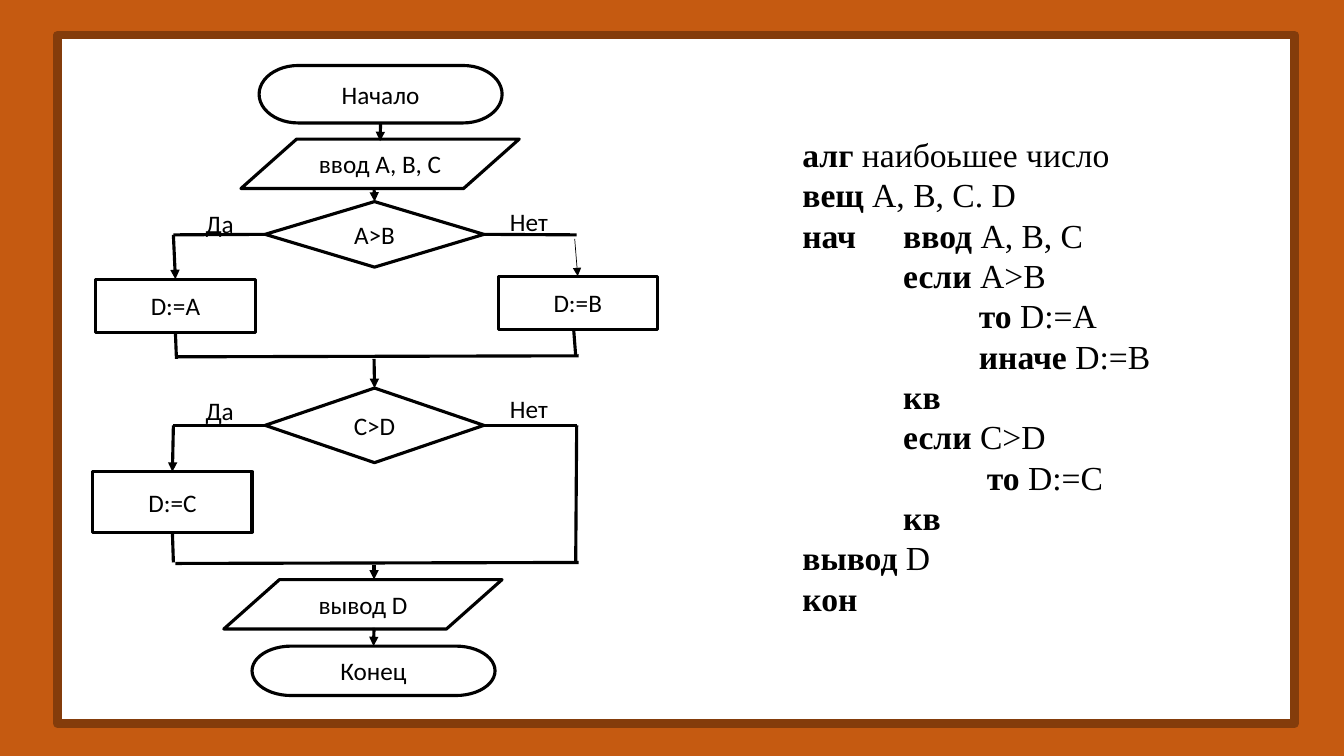
"""Build a slide with a flowchart for the largest of three numbers and its pseudocode."""
from dataclasses import dataclass
from typing import NamedTuple, Union

import lxml.etree
import pptx
import pptx.dml.color
import pptx.enum.shapes
import pptx.enum.text
import pptx.oxml.ns
import pptx.util

Inches = pptx.util.Inches
Kind = pptx.enum.shapes.MSO_SHAPE
ORANGE = pptx.dml.color.RGBColor(0xC5, 0x5A, 0x11)
BROWN = pptx.dml.color.RGBColor(0x84, 0x3C, 0x0B)
WHITE = pptx.dml.color.RGBColor(0xFF, 0xFF, 0xFF)
BLACK = pptx.dml.color.RGBColor(0, 0, 0)
TOP, LEFT, BOTTOM, RIGHT = range(4)
LEFT_RAIL, AXIS, RIGHT_RAIL = 1.72, 3.71, 5.72
BLOCK_SIZES = {
    Kind.FLOWCHART_TERMINATOR: 2.41,
    Kind.FLOWCHART_DATA: 2.76,
    Kind.FLOWCHART_DECISION: 2.17,
    Kind.FLOWCHART_PROCESS: 1.58,
}


class Point(NamedTuple):
    x: float
    y: float


class Dock(NamedTuple):
    block: str
    side: int


@dataclass
class Block:
    text: str
    kind: Kind
    left: float
    top: float
    height: float


@dataclass
class Wire:
    start: Union[Point, Dock]
    end: Union[Point, Dock]
    arrow: bool = False
    weight: float = 2.25


@dataclass
class Branch:
    decision: str
    axis_y: float
    label_top: float
    merge_y: float


@dataclass
class CodeLine:
    indent: float
    keyword: str
    rest: str = ""


BLOCKS = [
    Block("Начало", Kind.FLOWCHART_TERMINATOR, 2.57, 0.65, 0.57),
    Block("ввод А, В, С", Kind.FLOWCHART_DATA, 2.39, 1.38, 0.49),
    Block("А>В", Kind.FLOWCHART_DECISION, 2.63, 2, 0.65),
    Block("D:=А", Kind.FLOWCHART_PROCESS, 0.95, 2.77, 0.53),
    Block("D:=В", Kind.FLOWCHART_PROCESS, 4.94, 2.74, 0.53),
    Block("С>D", Kind.FLOWCHART_DECISION, 2.63, 3.85, 0.74),
    Block("D:=С", Kind.FLOWCHART_PROCESS, 0.92, 4.68, 0.6),
    Block("вывод D", Kind.FLOWCHART_DATA, 2.22, 5.75, 0.49),
    Block("Конец", Kind.FLOWCHART_TERMINATOR, 2.5, 6.41, 0.49),
]
BRANCHES = [Branch("А>В", 2.33, 2, 3.54), Branch("С>D", 4.22, 3.85, 5.59)]
WIRES = [
    Wire(Dock("Начало", BOTTOM), Point(3.77, 1.4), True),
    Wire(Point(AXIS, 1.86), Dock("А>В", TOP), True),
    Wire(Point(LEFT_RAIL, 2.33), Dock("D:=А", TOP), True),
    Wire(Point(5.7, 2.37), Dock("D:=В", TOP), True, 0.5),
    Wire(Dock("D:=А", BOTTOM), Point(1.75, 3.56)),
    Wire(Point(5.69, 3.27), Point(5.71, 3.53)),
    Wire(Point(AXIS, 3.56), Dock("С>D", TOP), True),
    Wire(Point(LEFT_RAIL, 4.22), Dock("D:=С", TOP), True),
    Wire(Dock("D:=С", BOTTOM), Point(LEFT_RAIL, 5.58)),
    Wire(Point(RIGHT_RAIL, 4.22), Point(5.71, 5.58)),
    Wire(Point(AXIS, 5.61), Point(AXIS, 5.75), True),
    Wire(Point(AXIS, 6.23), Dock("Конец", TOP), True),
]
CODE = [
    CodeLine(0, "алг", " наибоьшее число"),
    CodeLine(0, "вещ", " А, В, С. D"),
    CodeLine(0, "нач\tввод", " А, В, С"),
    CodeLine(1, "если", " А>В"),
    CodeLine(1.75, "то", " D:=А"),
    CodeLine(1.75, "иначе", " D:=В"),
    CodeLine(1, "кв"),
    CodeLine(1, "если", " С>D"),
    CodeLine(1.83, "то", " D:=С"),
    CodeLine(1, "кв"),
    CodeLine(0, "вывод", " D"),
    CodeLine(0, "кон"),
]


def style_font(font, name: str, size: float, bold: bool = False) -> None:
    font.name, font.size, font.bold = name, pptx.util.Pt(size), bold
    font.color.rgb = BLACK


def add_panel(page, kind, left: float, top: float, width: float, height: float, color, weight: float):
    panel = page.shapes.add_shape(kind, Inches(left), Inches(top), Inches(width), Inches(height))
    panel.shadow.inherit = False
    panel.fill.solid()
    panel.fill.fore_color.rgb = WHITE
    panel.line.color.rgb = color
    panel.line.width = pptx.util.Pt(weight)
    return panel


def add_block(page, block: Block):
    box = add_panel(page, block.kind, block.left, block.top, BLOCK_SIZES[block.kind], block.height, BLACK, 2.25)
    frame = box.text_frame
    frame.margin_top = frame.margin_bottom = 0
    frame.vertical_anchor = pptx.enum.text.MSO_ANCHOR.MIDDLE
    frame.text = block.text
    frame.paragraphs[0].alignment = pptx.enum.text.PP_ALIGN.CENTER
    style_font(frame.paragraphs[0].runs[0].font, "Calibri", 18)
    return box


def add_wire(page, wire: Wire, boxes: dict) -> None:
    ends = [end if isinstance(end, Point) else Point(0, 0) for end in (wire.start, wire.end)]
    line = page.shapes.add_connector(
        pptx.enum.shapes.MSO_CONNECTOR.STRAIGHT, *(Inches(value) for end in ends for value in end))
    if isinstance(wire.start, Dock):
        line.begin_connect(boxes[wire.start.block], wire.start.side)
    if isinstance(wire.end, Dock):
        line.end_connect(boxes[wire.end.block], wire.end.side)
    line.line.color.rgb = BLACK
    line.line.width = pptx.util.Pt(wire.weight)
    if wire.arrow:
        lxml.etree.SubElement(line.line._get_or_add_ln(), pptx.oxml.ns.qn("a:tailEnd"), type="triangle")
    lxml.etree.SubElement(line._element.spPr, pptx.oxml.ns.qn("a:effectLst"))


def add_frame(page, left: float, top: float, width: float, height: float):
    box = page.shapes.add_textbox(Inches(left), Inches(top), Inches(width), Inches(height))
    box.text_frame.word_wrap = True
    return box.text_frame


def add_branch(page, branch: Branch, boxes: dict) -> None:
    add_wire(page, Wire(Point(LEFT_RAIL, branch.axis_y), Dock(branch.decision, LEFT)), boxes)
    add_wire(page, Wire(Dock(branch.decision, RIGHT), Point(RIGHT_RAIL, branch.axis_y)), boxes)
    add_wire(page, Wire(Point(1.74, branch.merge_y), Point(5.74, branch.merge_y - 0.01)), boxes)
    for text, left, drop in (("Да", 1.94, 0.02), ("Нет", 4.96, 0)):
        frame = add_frame(page, left, branch.label_top + drop, 0.9, 0.3)
        frame.text = text
        style_font(frame.paragraphs[0].runs[0].font, "Calibri", 18)


def add_code(page, lines: list[CodeLine]) -> None:
    frame = add_frame(page, 7.86, 1.28, 4.15, 4.95)
    for index, line in enumerate(lines):
        para = frame.add_paragraph() if index else frame.paragraphs[0]
        properties = para._p.get_or_add_pPr()
        properties.set("marL", str(Inches(line.indent)))
        properties.set("indent", "0")
        if "\t" in line.keyword:
            tabs = lxml.etree.SubElement(properties, pptx.oxml.ns.qn("a:tabLst"))
            lxml.etree.SubElement(tabs, pptx.oxml.ns.qn("a:tab"), pos=str(Inches(0.95)), algn="l")
        for text, bold in ((line.keyword, True), (line.rest, False)):
            if text:
                span = para.add_run()
                span.text = text
                style_font(span.font, "Times New Roman", 24, bold)


def main() -> None:
    deck = pptx.Presentation()
    deck.slide_width, deck.slide_height = Inches(13.33), Inches(7.5)
    page = deck.slides.add_slide(deck.slide_layouts[6])
    page.background.fill.solid()
    page.background.fill.fore_color.rgb = ORANGE
    add_panel(page, Kind.RECTANGLE, 0.57, 0.35, 12.27, 6.83, BROWN, 6)
    boxes = {block.text: add_block(page, block) for block in BLOCKS}
    for branch in BRANCHES:
        add_branch(page, branch, boxes)
    for wire in WIRES:
        add_wire(page, wire, boxes)
    add_code(page, CODE)
    deck.save("out.pptx")


if __name__ == "__main__":
    main()
